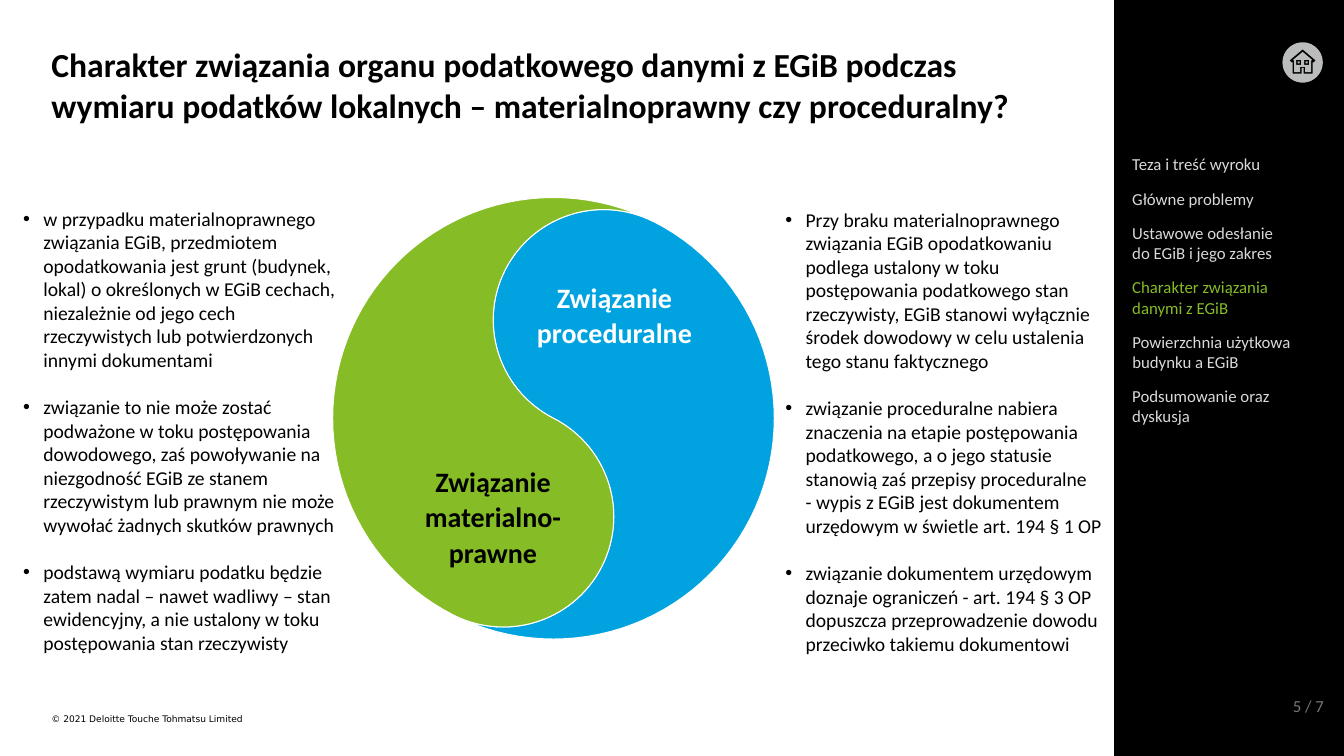
from math import cos, radians, sin

from pptx import Presentation
from pptx.dml.color import RGBColor
from pptx.enum.shapes import MSO_SHAPE
from pptx.enum.text import MSO_ANCHOR, MSO_AUTO_SIZE, PP_ALIGN
from pptx.util import Inches, Pt

COLORS = {
    "black": "000000",
    "white": "FFFFFF",
    "green": "86BC25",
    "blue": "00A3E0",
    "menu": "D9D9D9",
    "icon": "BBBCBC",
    "number": "75787B",
}

TITLE = (
    "Charakter związania organu podatkowego danymi z EGiB podczas wymiaru "
    "podatków lokalnych – materialnoprawny czy proceduralny?"
)
SUBSTANTIVE = [
    "w przypadku materialnoprawnego związania EGiB, przedmiotem opodatkowania "
    "jest grunt (budynek, lokal) o określonych w EGiB cechach, niezależnie od "
    "jego cech\vrzeczywistych lub potwierdzonych innymi dokumentami",
    "związanie to nie może zostać podważone w toku postępowania dowodowego, "
    "zaś powoływanie na niezgodność EGiB ze stanem rzeczywistym lub prawnym "
    "nie może wywołać żadnych skutków prawnych",
    "podstawą wymiaru podatku będzie zatem nadal – nawet wadliwy – stan "
    "ewidencyjny, a nie ustalony w toku postępowania stan rzeczywisty",
]
PROCEDURAL = [
    "Przy braku materialnoprawnego związania EGiB opodatkowaniu podlega "
    "ustalony w toku postępowania podatkowego stan rzeczywisty, EGiB stanowi "
    "wyłącznie środek dowodowy w celu ustalenia tego stanu faktycznego",
    "związanie proceduralne nabiera znaczenia na etapie postępowania "
    "podatkowego, a o jego statusie stanowią zaś przepisy proceduralne\v"
    "- wypis z EGiB jest dokumentem urzędowym w świetle art. 194 § 1 OP",
    "związanie dokumentem urzędowym doznaje ograniczeń - art. 194 § 3 OP "
    "dopuszcza przeprowadzenie dowodu przeciwko takiemu dokumentowi",
]
MENU = [
    ("Teza i treść wyroku", 1, 1.54, "menu"),
    ("Główne problemy", 1, 1.54, "menu"),
    ("Ustawowe odesłanie do EGiB i jego zakres", 2, 1.54, "menu"),
    ("Charakter związania danymi z EGiB", 2, 1.73, "green"),
    ("Powierzchnia użytkowa budynku a EGiB", 2, 1.81, "menu"),
    ("Podsumowanie oraz dyskusja", 2, 1.73, "menu"),
]
LABELS = [
    ("Związanie proceduralne", (5.13, 2.76, 1.93, 0.71), "white"),
    ("Związanie materialno-prawne", (4.19, 4.58, 1.4, 1.07), "black"),
]
COPYRIGHT = "© 2021 Deloitte Touche Tohmatsu Limited"
PAGE_NUMBER = "5 / 7"

DISC_CENTER, DISC_RADIUS = (5.49, 4.15), 2.19
LOBE_RADIUS, AXIS = DISC_RADIUS / 2, 63
ICON_CENTER, ICON_RADIUS = (12.92, 0.62), 0.2
HOUSE_HALF = [(0, -13), (13, -2), (11, 0), (10, 0), (10, 11), (1, 11), (1, 5.5)]
ROOM_HALF = [(0, -10.5), (9.5, -2.5), (8.5, -2), (8.5, 9.5), (2.5, 9.5), (2.5, 4.5)]
WINDOW_CENTER, WINDOW_HALF_SIZES = 4, (2.5, 1)


def rgb(name):
    return RGBColor.from_string(COLORS[name])


def write_text(shape, texts, box, size=12, color="black", font="Calibri", bold=False,
               align=PP_ALIGN.LEFT, anchor=MSO_ANCHOR.TOP, spacing=1.0, gap=0,
               margins=(0, 0), hanging=0):
    shape.left, shape.top, shape.width, shape.height = map(Inches, box)
    frame = shape.text_frame
    frame.word_wrap = True
    frame.auto_size = MSO_AUTO_SIZE.NONE
    frame.vertical_anchor = anchor
    frame.margin_left = frame.margin_right = Inches(margins[0])
    frame.margin_top = frame.margin_bottom = Inches(margins[1])
    for index, text in enumerate(texts):
        paragraph = frame.add_paragraph() if index else frame.paragraphs[0]
        paragraph.text = text
        paragraph.alignment = align
        paragraph.line_spacing = spacing
        paragraph.space_before = Pt(gap if index else 0)
        if hanging:
            properties = paragraph._p.get_or_add_pPr()
            properties.set("marL", str(Inches(hanging)))
            properties.set("indent", str(-Inches(hanging)))
        for run in paragraph.runs:
            run.font.size = Pt(size)
            run.font.name = font
            run.font.bold = bold
            run.font.color.rgb = rgb(color)


def add_text(slide, text, box, **style):
    write_text(slide.shapes.add_textbox(0, 0, 0, 0), [text], box, **style)


def arc(center, radius, start, end, steps=60):
    angles = [radians(start + (end - start) * step / steps) for step in range(steps + 1)]
    return [(center[0] + radius * cos(a), center[1] + radius * sin(a)) for a in angles]


def paint(shape, fill, line=None):
    shape.shadow.inherit = False
    shape.fill.solid()
    shape.fill.fore_color.rgb = rgb(fill)
    if line:
        shape.line.color.rgb = rgb(line)
        shape.line.width = Pt(0.75)
    else:
        shape.line.fill.background()


def add_outline(slide, contours, fill, line=None):
    contours = [[(Inches(x), Inches(y)) for x, y in contour] for contour in contours]
    builder = slide.shapes.build_freeform(*contours[0][0], scale=1.0)
    for index, contour in enumerate(contours):
        if index:
            builder.move_to(*contour[0])
        builder.add_line_segments(contour[1:], close=True)
    paint(builder.convert_to_shape(), fill, line)


def add_yin_yang(slide):
    x, y = DISC_CENTER
    shift_x = LOBE_RADIUS * cos(radians(AXIS))
    shift_y = LOBE_RADIUS * sin(radians(AXIS))
    upper, lower = (x + shift_x, y - shift_y), (x - shift_x, y + shift_y)
    wave = arc(upper, LOBE_RADIUS, -AXIS, -AXIS - 180)
    wave += arc(lower, LOBE_RADIUS, -AXIS, 180 - AXIS)
    for fill, end in (("blue", -AXIS), ("green", 360 - AXIS)):
        rim = arc(DISC_CENTER, DISC_RADIUS, 180 - AXIS, end)
        add_outline(slide, [wave + rim], fill, "white")


def add_home_icon(slide):
    contours = [half + [(-x, y) for x, y in reversed(half)] for half in (HOUSE_HALF, ROOM_HALF)]
    for center in (-WINDOW_CENTER, WINDOW_CENTER):
        for half in WINDOW_HALF_SIZES:
            corners = [(-half, -half), (half, -half), (half, half), (-half, half)]
            contours.append([(center + x, y) for x, y in corners])
    placed = [[(ICON_CENTER[0] + x / 100, ICON_CENTER[1] + y / 100) for x, y in contour]
              for contour in contours]
    add_outline(slide, [arc(ICON_CENTER, ICON_RADIUS, 0, 360)] + placed, "icon")


def main():
    presentation = Presentation()
    presentation.slide_width, presentation.slide_height = Inches(13.33), Inches(7.5)
    slide = presentation.slides.add_slide(presentation.slide_layouts[3])

    sidebar = slide.shapes.add_shape(
        MSO_SHAPE.RECTANGLE, Inches(11.05), 0, Inches(2.28), Inches(7.5))
    paint(sidebar, "black")
    add_home_icon(slide)
    add_yin_yang(slide)

    write_text(slide.shapes.title, [TITLE], (0.51, 0.44, 10.02, 0.37), size=24, bold=True)
    list_style = dict(size=14, gap=17, margins=(0.1, 0.05), hanging=0.2)
    write_text(slide.placeholders[1], SUBSTANTIVE, (0.13, 2, 3.49, 4.81), **list_style)
    write_text(slide.placeholders[2], PROCEDURAL, (7.69, 2.01, 3.43, 5.05), **list_style)

    for text, box, color in LABELS:
        add_text(slide, text, box, size=20, color=color, bold=True, spacing=1.06,
                 align=PP_ALIGN.CENTER, anchor=MSO_ANCHOR.MIDDLE)

    top = 1.53
    for text, lines, width, color in MENU:
        height = 0.2 * lines
        add_text(slide, text, (11.23, top, width, height), color=color)
        top += height + 0.14

    add_text(slide, COPYRIGHT, (0.51, 7.08, 5.86, 0.11), size=6.5, font="DejaVu Sans")
    add_text(slide, PAGE_NUMBER, (11.24, 6.9, 1.89, 0.2), color="number",
             align=PP_ALIGN.RIGHT)
    presentation.save("out.pptx")


if __name__ == "__main__":
    main()
